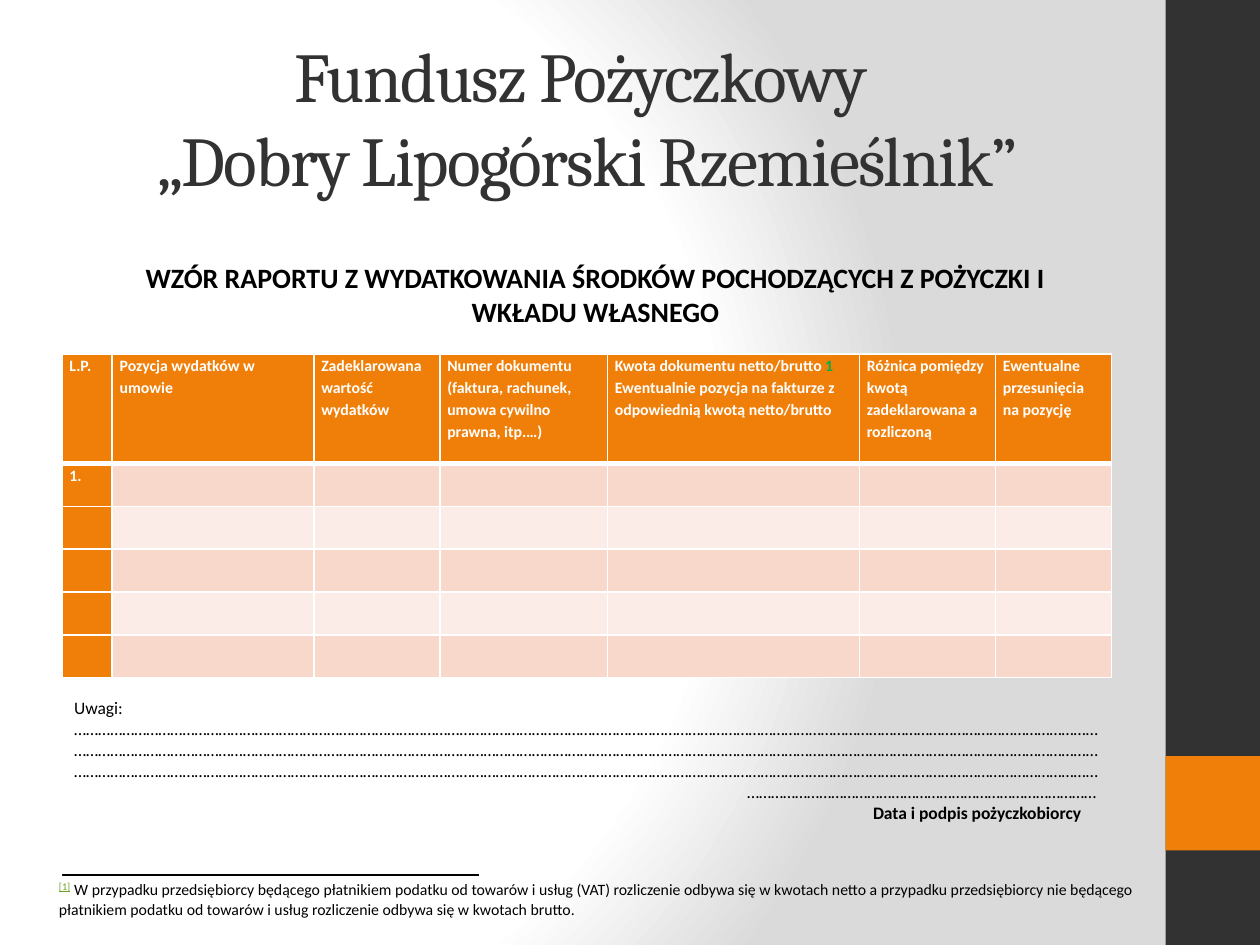
from dataclasses import dataclass

from lxml.etree import fromstring
from pptx import Presentation
from pptx.dml.color import RGBColor
from pptx.enum.shapes import MSO_SHAPE
from pptx.enum.text import MSO_ANCHOR, MSO_AUTO_SIZE, PP_ALIGN
from pptx.oxml.ns import nsdecls, qn
from pptx.util import Inches, Pt


@dataclass(frozen=True)
class Theme:
    """Colours, fonts and type sizes of the slide."""
    dark: str = "323232"
    accent: str = "F07F09"
    black: str = "000000"
    white: str = "FFFFFF"
    grey: str = "DADADA"
    odd: str = "F9D8CC"
    even: str = "FCECE7"
    green: str = "00B050"
    link: str = "6B9F25"
    serif: str = "Cambria"
    sans: str = "Calibri"
    title: int = 40
    head: int = 16
    note: int = 10
    small: int = 9


THEME = Theme()
HEADS = [
    "L.P.",
    "Pozycja wydatków w umowie",
    "Zadeklarowana wartość wydatków",
    "Numer dokumentu (faktura, rachunek, umowa cywilno prawna, itp.…)",
    "Kwota dokumentu netto/brutto ",
    "Różnica pomiędzy kwotą zadeklarowana a rozliczoną",
    "Ewentualne przesunięcia na pozycję",
]
AMOUNT = 4
DETAIL = "Ewentualnie pozycja na fakturze z odpowiednią kwotą netto/brutto"
WIDTHS = [0.4, 1.6, 1, 1.33, 2, 1.08, 0.92]
HEIGHTS = [0.87] + [0.34] * 5
FOOT = [
    "W przypadku przedsiębiorcy będącego płatnikiem podatku od towarów i usług (VAT) "
    "rozliczenie odbywa się w kwotach netto a przypadku przedsiębiorcy nie będącego",
    "płatnikiem podatku od towarów i usług rozliczenie odbywa się w kwotach brutto.",
]


def rgb(code):
    """Turn a hex code into a colour."""
    return RGBColor.from_string(code)


def style(font, size, color=THEME.black, name=THEME.sans, bold=False):
    """Set the look of a font."""
    font.size, font.name, font.bold = Pt(size), name, bold
    font.color.rgb = rgb(color)


def place(shape, box):
    """Move a shape into a box given in inches."""
    shape.left, shape.top, shape.width, shape.height = map(Inches, box)


def paint(slide):
    """Give the slide its radial background."""
    stops = [(0, THEME.white), (75, THEME.white), (100, THEME.grey)]
    marks = "".join(
        f'<a:gs pos="{pos * 1000}"><a:srgbClr val="{code}"/></a:gs>' for pos, code in stops)
    slide.element.cSld.insert(0, fromstring(
        f'<p:bg {nsdecls("p", "a")}><p:bgPr><a:gradFill rotWithShape="1"><a:gsLst>{marks}</a:gsLst>'
        '<a:path path="circle"><a:fillToRect l="20000" t="50000" r="100000" b="50000"/></a:path>'
        '</a:gradFill><a:effectLst/></p:bgPr></p:bg>'))


def add_block(slide, box, color):
    """Add a plain filled rectangle."""
    block = slide.shapes.add_shape(MSO_SHAPE.RECTANGLE, *map(Inches, box))
    block.shadow.inherit = False
    block.fill.solid()
    block.fill.fore_color.rgb = rgb(color)
    block.line.fill.background()
    return block


def add_side(slide, box):
    """Add the dark side band with its accent square."""
    left, top, width, height = box
    add_block(slide, box, THEME.dark)
    add_block(slide, (left, top + height - 2 * width, width, width), THEME.accent)


def add_title(slide, box):
    """Fill the title placeholder."""
    title = slide.shapes.title
    place(title, box)
    frame = title.text_frame
    frame.auto_size = MSO_AUTO_SIZE.NONE
    frame.vertical_anchor = MSO_ANCHOR.MIDDLE
    frame.text = "Fundusz Pożyczkowy \v„Dobry Lipogórski Rzemieślnik”"
    line = frame.paragraphs[0]
    line.alignment = PP_ALIGN.CENTER
    style(line.font, THEME.title, THEME.dark, THEME.serif)
    for run in line.runs:
        run.font._element.set("spc", "-100")


def add_head(slide, box):
    """Fill the body placeholder with the form heading."""
    body = slide.placeholders[1]
    place(body, box)
    frame = body.text_frame
    frame.auto_size = MSO_AUTO_SIZE.NONE
    frame.text = "WZÓR RAPORTU Z WYDATKOWANIA ŚRODKÓW POCHODZĄCYCH Z POŻYCZKI I WKŁADU WŁASNEGO"
    line = frame.paragraphs[0]
    line.alignment = PP_ALIGN.CENTER
    style(line.font, THEME.head, bold=True)
    props = line._p.get_or_add_pPr()
    props.set("marL", str(Inches(0.12)))
    props.set("indent", "0")
    props.insert(0, props.makeelement(qn("a:buNone"), {}))


def edge(cell, sides):
    """Draw the white borders of a cell, with widths in points."""
    props = cell._tc.get_or_add_tcPr()
    for spot, (side, width) in enumerate(sides.items()):
        props.insert(spot, fromstring(
            f'<a:ln{side} {nsdecls("a")} w="{Pt(width)}"><a:solidFill>'
            f'<a:srgbClr val="{THEME.white}"/></a:solidFill></a:ln{side}>'))


def add_grid(slide, box):
    """Add the expense table."""
    grid = slide.shapes.add_table(len(HEIGHTS), len(WIDTHS), *map(Inches, box)).table
    for col, width in zip(grid.columns, WIDTHS):
        col.width = Inches(width)
    for row, height in zip(grid.rows, HEIGHTS):
        row.height = Inches(height)
    for col, text in enumerate(HEADS):
        grid.cell(0, col).text = text
    grid.cell(1, 0).text = "1."
    amount = grid.cell(0, AMOUNT).text_frame
    mark = amount.paragraphs[0].add_run()
    mark.text = "1"
    mark.font.color.rgb = rgb(THEME.green)
    amount.add_paragraph().text = DETAIL
    for row in range(len(HEIGHTS)):
        for col in range(len(WIDTHS)):
            cell = grid.cell(row, col)
            cell.margin_left = cell.margin_right = Inches(0.06)
            cell.margin_top = cell.margin_bottom = 0
            band = THEME.odd if row % 2 else THEME.even
            cell.fill.solid()
            cell.fill.fore_color.rgb = rgb(THEME.accent if 0 in (row, col) else band)
            edge(cell, {"L": 1, "R": 1, "T": 3 if row == 1 else 1, "B": 1 if row else 3})
            for line in cell.text_frame.paragraphs:
                line.line_spacing = 1.15
                style(line.font, THEME.small, THEME.white, bold=True)


def add_notes(slide, box):
    """Add the remarks lines and the signature."""
    frame = slide.shapes.add_textbox(*map(Inches, box)).text_frame
    frame.word_wrap = True
    frame.margin_right = Inches(0.05)
    rows = [("Uwagi: " + "…" * 255, 0, False), ("…" * 29, 5.34, False),
            ("Data i podpis pożyczkobiorcy", 6.34, True)]
    for spot, (text, indent, bold) in enumerate(rows):
        line = frame.add_paragraph() if spot else frame.paragraphs[0]
        line.text = text
        style(line.font, THEME.note, bold=bold)
        line._p.get_or_add_pPr().set("marL", str(Inches(indent)))


def add_foot(slide, box):
    """Add the footnote under its rule."""
    left, top = box[:2]
    rule = add_block(slide, (left + 0.13, top + 0.02, 3.3, 0.01), THEME.black)
    rule.line.color.rgb = rgb(THEME.black)
    rule.line.width = Pt(0.75)
    frame = slide.shapes.add_textbox(*map(Inches, box)).text_frame
    frame.word_wrap = False
    frame.auto_size = MSO_AUTO_SIZE.SHAPE_TO_FIT_TEXT
    frame.vertical_anchor = MSO_ANCHOR.MIDDLE
    first, last = frame.paragraphs[0], frame.add_paragraph()
    mark, gap, text = [first.add_run() for _ in range(3)]
    mark.text, gap.text, text.text = "[1]", " ", FOOT[0]
    style(mark.font, THEME.note, THEME.link)
    mark.font.underline = True
    mark.font._element.set("baseline", "30000")
    style(gap.font, THEME.note)
    style(text.font, THEME.small)
    last.text = FOOT[1]
    style(last.font, THEME.small)


def main():
    """Build and save the slide."""
    deck = Presentation()
    deck.slide_width, deck.slide_height = Inches(10), Inches(7.5)
    slide = deck.slides.add_slide(deck.slide_layouts[1])
    paint(slide)
    add_side(slide, (9.25, 0, 0.75, 7.5))
    add_title(slide, (0.5, 0.3, 8.33, 1.25))
    add_head(slide, (0.5, 2.02, 8.33, 0.63))
    add_grid(slide, (0.49, 2.81, 8.33, 2.57))
    add_foot(slide, (0.37, 6.92, 8.9, 0.42))
    add_notes(slide, (0.49, 5.48, 8.35, 1.11))
    deck.save("out.pptx")


if __name__ == "__main__":
    main()
